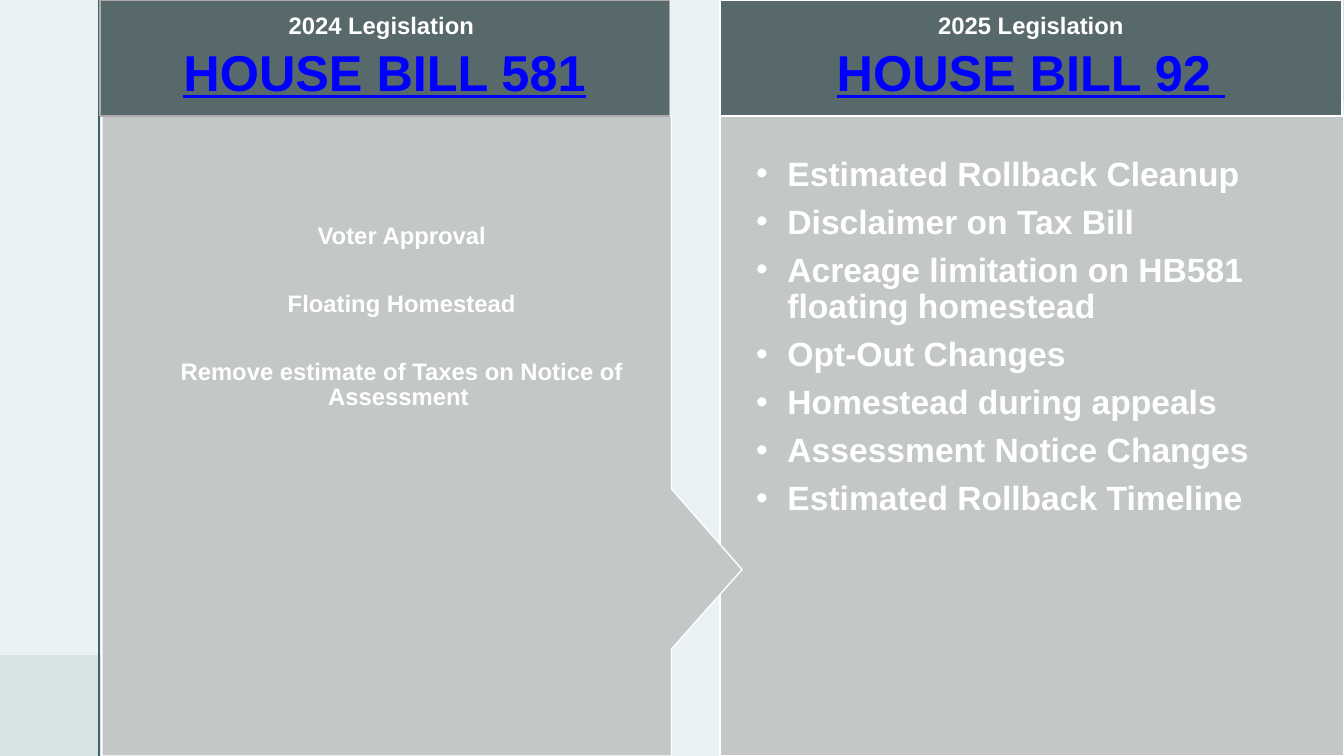
from dataclasses import dataclass
from typing import Any

from lxml.etree import SubElement
from pptx import Presentation
from pptx.dml.color import RGBColor
from pptx.enum.shapes import MSO_CONNECTOR, MSO_SHAPE
from pptx.enum.text import MSO_ANCHOR, PP_ALIGN
from pptx.oxml.ns import qn
from pptx.util import Pt

EMU_PER_PX = 9144  # 100 px to the inch
SLIDE_W, SLIDE_H = 1333, 750
HEADER_H = 115
INSET = 6


@dataclass(frozen=True)
class Theme:
    background: str = "EAF1F2"
    corner: str = "D5E3E5"
    rule: str = "40636A"
    header: str = "58696B"
    body: str = "C4C7C7"
    white: str = "FFFFFF"
    grey_edge: str = "AFABAB"
    bill: str = "0000FF"
    font: str = "Arial"
    small: int = 17
    medium: int = 24
    large: int = 36


THEME = Theme()


@dataclass(frozen=True)
class Line:
    text: str
    size: int
    color: str = THEME.white
    underline: bool = False
    bullet: bool = False
    extra_gap: float = 0  # points added to the usual space after


@dataclass(frozen=True)
class Panel:
    box: tuple[int, int, int, int]  # left, top, width, height
    fill: str
    edge: str
    lines: list[Line]
    insets: tuple[int, int, int, int] = (INSET, INSET, INSET, INSET)  # left, top, right, bottom
    anchor: MSO_ANCHOR = MSO_ANCHOR.TOP
    arrow: tuple[tuple[int, int], ...] = ()  # points that break the right side


def px(length: int) -> int:
    return length * EMU_PER_PX


def rgb(color: str) -> RGBColor:
    return RGBColor.from_string(color)


def apply(target: Any, values: dict[str, Any]) -> None:
    for name, value in values.items():
        setattr(target, name, value)


def draw_block(slide: Any, box: tuple[int, int, int, int], fill: str) -> Any:
    block = slide.shapes.add_shape(MSO_SHAPE.RECTANGLE, *map(px, box))
    block.shadow.inherit = False
    block.fill.solid()
    block.fill.fore_color.rgb = rgb(fill)
    block.line.fill.background()
    return block


def draw_arrow_block(slide: Any, panel: Panel) -> Any:
    left, top, width, height = panel.box
    right, bottom = left + width, top + height
    outline = slide.shapes.build_freeform(left, top, scale=EMU_PER_PX)
    outline.add_line_segments(
        [(right, top), *panel.arrow, (right, bottom), (left, bottom)], close=True)
    block = outline.convert_to_shape()
    block.shadow.inherit = False
    block.fill.solid()
    block.fill.fore_color.rgb = rgb(panel.fill)
    return block


def write_line(paragraph: Any, line: Line) -> None:
    apply(paragraph, {
        "alignment": PP_ALIGN.LEFT if line.bullet else PP_ALIGN.CENTER,
        "line_spacing": 0.9,
        "space_after": Pt(line.size * 0.35 + line.extra_gap),
    })
    if line.bullet:
        properties = paragraph._p.get_or_add_pPr()
        properties.set("marL", str(px(31)))
        properties.set("indent", str(px(-31)))
        SubElement(properties, qn("a:buFont")).set("typeface", THEME.font)
        SubElement(properties, qn("a:buChar")).set("char", "•")
    run = paragraph.add_run()
    run.text = line.text
    apply(run.font, {"name": THEME.font, "size": Pt(line.size), "bold": True,
                     "underline": line.underline})
    run.font.color.rgb = rgb(line.color)


def draw_panel(slide: Any, panel: Panel) -> None:
    if panel.arrow:
        block = draw_arrow_block(slide, panel)
    else:
        block = draw_block(slide, panel.box, panel.fill)
    block.line.color.rgb = rgb(panel.edge)
    block.line.width = Pt(1)
    frame = block.text_frame
    left, top, right, bottom = map(px, panel.insets)
    apply(frame, {"word_wrap": True, "vertical_anchor": panel.anchor,
                  "margin_left": left, "margin_top": top,
                  "margin_right": right, "margin_bottom": bottom})
    for index, line in enumerate(panel.lines):
        write_line(frame.add_paragraph() if index else frame.paragraphs[0], line)


def header(left: int, width: int, edge: str, year: str, bill: str) -> Panel:
    lines = [Line(year, THEME.small),
             Line(bill, THEME.large, THEME.bill, underline=True)]
    return Panel((left, 0, width, HEADER_H), THEME.header, edge, lines,
                 anchor=MSO_ANCHOR.MIDDLE)


CHANGES_2024 = ["Voter Approval", "Floating Homestead",
                "Remove estimate of Taxes on Notice of Assessment "]
CHANGES_2025 = ["Estimated Rollback Cleanup", "Disclaimer on Tax Bill",
                "Acreage limitation on HB581 floating homestead",
                "Opt-Out Changes", "Homestead during appeals",
                "Assessment Notice Changes", "Estimated Rollback Timeline"]
BODY_H = SLIDE_H - HEADER_H
ARROW_DEPTH = 70

PANELS = [
    Panel((714, HEADER_H, 619, BODY_H), THEME.body, THEME.white,
          [Line(text, THEME.medium, bullet=True) for text in CHANGES_2025],
          insets=(36, 41, INSET, INSET)),
    header(714, 617, THEME.white, "2025 Legislation", "HOUSE BILL 92 "),
    Panel((101, HEADER_H, 565, BODY_H), THEME.body, THEME.white,
          [Line(text, THEME.small, extra_gap=24.2) for text in CHANGES_2024],
          insets=(36, 107, INSET + ARROW_DEPTH, INSET),
          arrow=((666, 485), (666 + ARROW_DEPTH, 565), (666, 644))),
    header(99, 565, THEME.grey_edge, "2024 Legislation ", "HOUSE BILL 581"),
]


def main() -> None:
    deck = Presentation()
    apply(deck, {"slide_width": px(SLIDE_W), "slide_height": px(SLIDE_H)})
    slide = deck.slides.add_slide(deck.slide_layouts[6])

    # Background, corner squares and vertical rule
    slide.background.fill.solid()
    slide.background.fill.fore_color.rgb = rgb(THEME.background)
    for left, top in ((0, 650), (1233, 0)):
        draw_block(slide, (left, top, 100, 100), THEME.corner)
    rule = slide.shapes.add_connector(
        MSO_CONNECTOR.STRAIGHT, px(98), 0, px(98), px(SLIDE_H))
    rule.line.color.rgb = rgb(THEME.rule)
    rule.line.width = Pt(1.5)
    SubElement(rule._element.spPr, qn("a:effectLst"))

    # Bill panels, back to front
    for panel in PANELS:
        draw_panel(slide, panel)

    deck.save("out.pptx")


if __name__ == "__main__":
    main()
